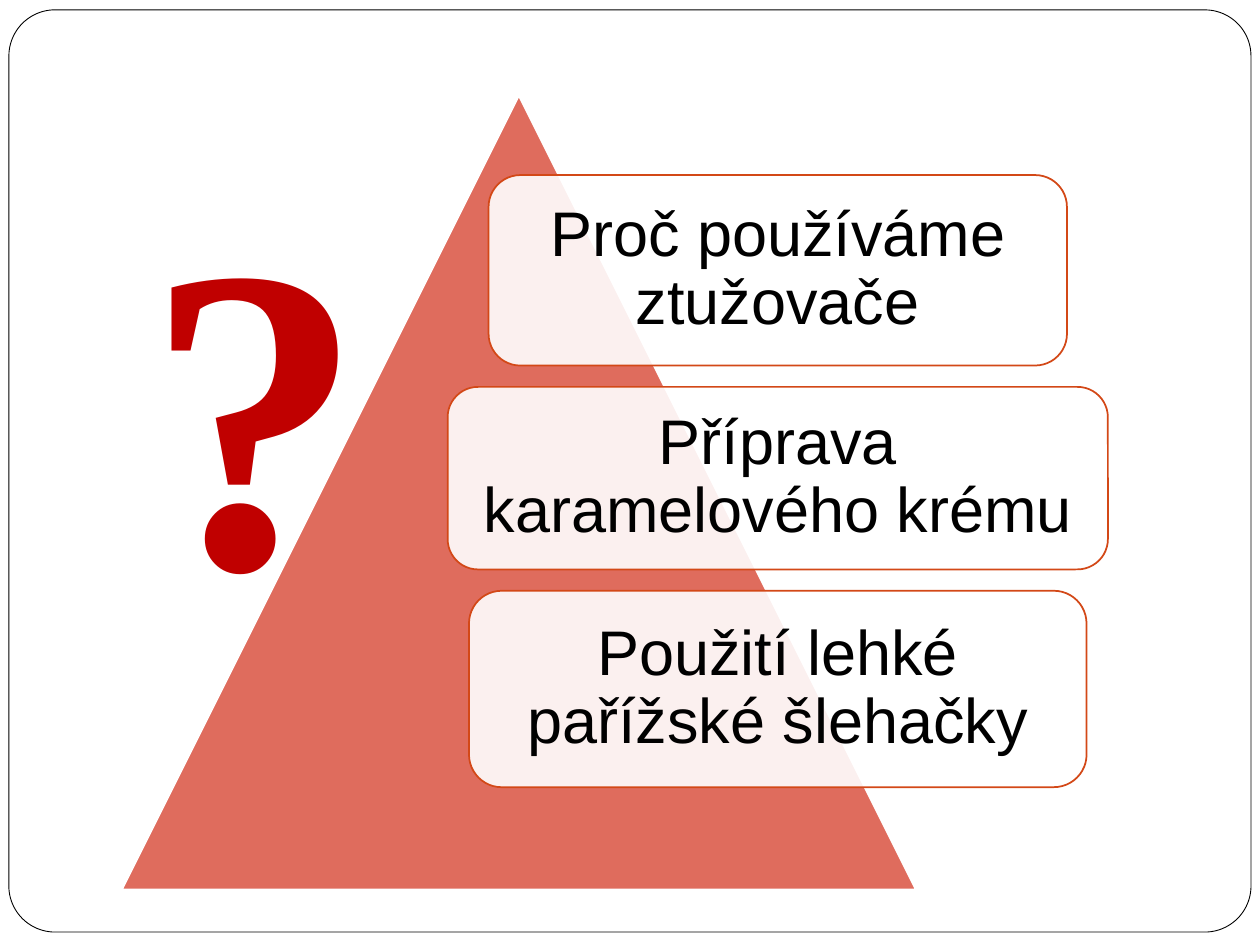
from lxml.etree import SubElement
from pptx import Presentation
from pptx.dml.color import RGBColor
from pptx.enum.shapes import MSO_SHAPE
from pptx.enum.text import MSO_ANCHOR, PP_ALIGN
from pptx.oxml.ns import qn
from pptx.util import Cm, Pt

# Content: text, width and height of each card in cm
CARDS = [
    ("Proč používáme ztužovače", 11.66, 3.84),
    ("Příprava karamelového krému", 13.31, 3.68),
    ("Použití lehké pařížské šlehačky", 12.45, 3.96),
]
MARK = "?"

COLORS = {"white": "FFFFFF", "black": "000000", "coral": "DF6C5D",
          "rust": "D34817", "red": "C00000"}
FONTS = {
    "card": {"name": "Arial", "size": Pt(36), "bold": False},
    "mark": {"name": "Times New Roman", "size": Pt(250), "bold": True},
}
INSETS = ("margin_left", "margin_top", "margin_right", "margin_bottom")
MID, TOP, GAP = 15.68, 3.53, 0.43


def tint(name):
    return RGBColor.from_string(COLORS[name])


def draw(kind, box, fill, line, width):
    shape = slide.shapes.add_shape(kind, *map(Cm, box))
    shape.shadow.inherit = False
    shape.fill.solid()
    shape.fill.fore_color.rgb = tint(fill)
    shape.line.color.rgb = tint(line)
    shape.line.width = Pt(width)
    return shape


def write(frame, text, style, color, align):
    frame.word_wrap = True
    para = frame.paragraphs[0]
    para.alignment = align
    run = para.add_run()
    run.text = text
    run.font.color.rgb = tint(color)
    for key, val in FONTS[style].items():
        setattr(run.font, key, val)
    return para


deck = Presentation()
deck.slide_width, deck.slide_height = Cm(25.4), Cm(19.05)
slide = deck.slides.add_slide(deck.slide_layouts[6])

# Page frame and triangle
frame = draw(MSO_SHAPE.ROUNDED_RECTANGLE, (0.18, 0.2, 25.04, 18.59),
             "white", "black", 0.5)
frame.adjustments[0] = 0.05
draw(MSO_SHAPE.ISOSCELES_TRIANGLE, (2.46, 1.93, 16, 16), "coral", "white", 1)

# Cards, stacked on one centre line
top = TOP
for text, wide, high in CARDS:
    card = draw(MSO_SHAPE.ROUNDED_RECTANGLE,
                (MID - wide / 2, top, wide, high), "white", "rust", 1)
    color = card.fill._xPr.find(qn("a:solidFill"))[0]
    SubElement(color, qn("a:alpha"), val="90000")
    body = card.text_frame
    body.vertical_anchor = MSO_ANCHOR.MIDDLE
    for side in INSETS:
        setattr(body, side, Cm(0.38))
    para = write(body, text, "card", "black", PP_ALIGN.CENTER)
    para.line_spacing = 0.9
    top += high + GAP

# Question mark
note = slide.shapes.add_textbox(Cm(2.69), Cm(2.51), Cm(3.4), Cm(10.95))
write(note.text_frame, MARK, "mark", "red", PP_ALIGN.LEFT)

deck.save("out.pptx")
